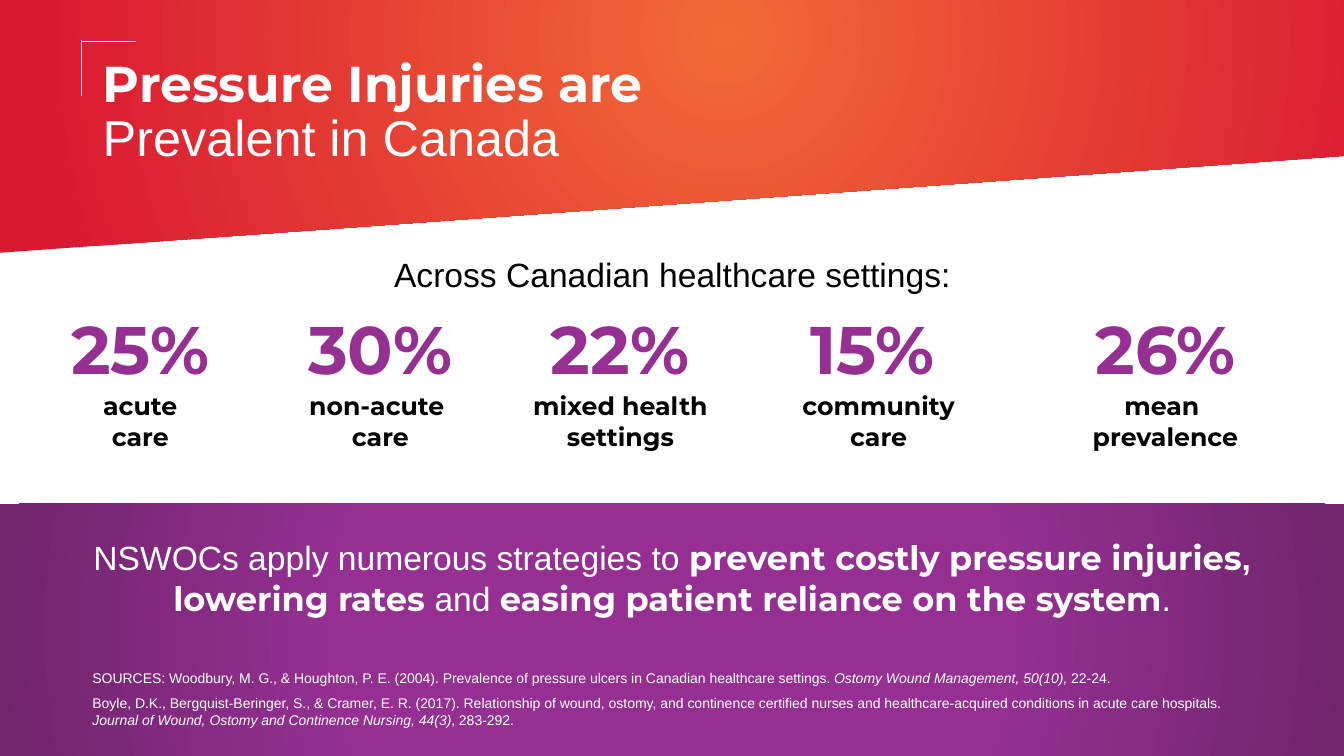
"""Build a slide on the prevalence of pressure injuries in Canadian healthcare."""
from lxml.etree import SubElement
from pptx import Presentation
from pptx.dml.color import RGBColor
from pptx.enum.shapes import MSO_CONNECTOR, MSO_SHAPE
from pptx.enum.text import MSO_ANCHOR, PP_ALIGN
from pptx.oxml.ns import qn
from pptx.util import Cm, Pt

WHITE = RGBColor(0xFF, 0xFF, 0xFF)
BLACK = RGBColor(0, 0, 0)
ORANGE = RGBColor(0xF2, 0x69, 0x36)
RED = RGBColor(0xDA, 0x1A, 0x32)
PURPLE = RGBColor(0x95, 0x30, 0x92)
DARK_PURPLE = RGBColor(0x70, 0x24, 0x6D)
BODY_FONT, BOLD_FONT = "Arial", "Montserrat"


def paint_radial(shape, inner, outer, start, across, down):
    """Fill a shape with a circular gradient centred at the given percentages."""
    shape.shadow.inherit = False
    shape.line.fill.background()
    shape.fill.gradient()
    stops = shape.fill.gradient_stops
    for stop, color, position in zip(stops, (inner, outer), (start, 1)):
        stop.color.rgb = color
        stop.position = position
    gradient = shape._element.spPr.find(qn("a:gradFill"))
    gradient.remove(gradient.find(qn("a:lin")))
    circle = SubElement(gradient, qn("a:path"), path="circle")
    sides = {"l": across, "t": down, "r": 100 - across, "b": 100 - down}
    SubElement(circle, qn("a:fillToRect"),
               {side: str(percent * 1000) for side, percent in sides.items()})


def add_spans(paragraph, spans, size, color):
    """Add (text, font, bold, italic) runs, with line breaks at newlines."""
    for text, font, bold, italic in spans:
        for number, line in enumerate(text.split("\n")):
            if number:
                paragraph.add_line_break()
            if line:
                span = paragraph.add_run()
                span.text = line
                span.font.name = font
                span.font.size = Pt(size)
                span.font.bold = bold
                span.font.italic = italic
                span.font.color.rgb = color


deck = Presentation()
deck.slide_width, deck.slide_height = Cm(33.87), Cm(19.05)
page = deck.slides.add_slide(deck.slide_layouts[6])

outline = page.shapes.build_freeform(0, 0)
outline.add_line_segments([(Cm(33.87), 0), (Cm(33.87), Cm(3.93)), (0, Cm(6.37))])
paint_radial(outline.convert_to_shape(), ORANGE, RED, 0, 54, 14)

footer = page.shapes.add_shape(MSO_SHAPE.RECTANGLE, 0, Cm(12.7), Cm(33.87), Cm(6.35))
paint_radial(footer, PURPLE, DARK_PURPLE, 0.48, 50, 50)

TITLE = [("Pressure Injuries are \n", BOLD_FONT, True, False),
         ("Prevalent in Canada", BODY_FONT, False, False)]
INTRO = [("Across Canadian healthcare settings:", BODY_FONT, False, False)]
STATEMENT = [
    ("NSWOCs apply numerous strategies to ", BODY_FONT, False, False),
    ("prevent costly pressure injuries", BOLD_FONT, True, False),
    (",", BODY_FONT, True, False),
    (" lowering rates ", BOLD_FONT, True, False),
    ("and ", BODY_FONT, False, False),
    ("easing patient reliance on the system", BOLD_FONT, True, False),
    (".", BODY_FONT, False, False),
]
SOURCES = [
    [("SOURCES: Woodbury, M. G., & Houghton, P. E. (2004). Prevalence of pressure "
      "ulcers in Canadian healthcare settings. ", BODY_FONT, False, False),
     ("Ostomy Wound Management, 50(10), ", BODY_FONT, False, True),
     ("22-24.", BODY_FONT, False, False)],
    [("Boyle, D.K., Bergquist-Beringer, S., & Cramer, E. R. (2017). Relationship of "
      "wound, ostomy, and continence certified nurses and healthcare-acquired "
      "conditions in acute care hospitals. ", BODY_FONT, False, False),
     ("Journal of Wound, Ostomy and Continence Nursing, 44(3)", BODY_FONT, False, True),
     (", 283-292.", BODY_FONT, False, False)],
]

TEXTS = [
    ((2.34, 1.02, 29.21, 3.68), [TITLE], 36, WHITE, PP_ALIGN.LEFT,
     MSO_ANCHOR.MIDDLE, 0.9, 0, 0),
    ((2.34, 6.4, 29.21, 1.3), [INTRO], 24, BLACK, PP_ALIGN.CENTER,
     MSO_ANCHOR.TOP, 0.9, 10, 12),
    ((0.53, 13.41, 32.82, 2.31), [STATEMENT], 24, WHITE, PP_ALIGN.CENTER,
     MSO_ANCHOR.TOP, 1.0, 0, 0),
    ((2.08, 16.74, 29.69, 1.75), SOURCES, 10, WHITE, PP_ALIGN.LEFT,
     MSO_ANCHOR.TOP, 1.0, 3, 3),
]
for place, paragraphs, size, color, align, anchor, spacing, before, after in TEXTS:
    frame = page.shapes.add_textbox(*map(Cm, place)).text_frame
    frame.word_wrap = True
    frame.vertical_anchor = anchor
    for number, spans in enumerate(paragraphs):
        paragraph = frame.add_paragraph() if number else frame.paragraphs[0]
        paragraph.alignment = align
        paragraph.line_spacing = spacing
        paragraph.space_before, paragraph.space_after = Pt(before), Pt(after)
        add_spans(paragraph, spans, size, color)

RATES = [
    ("25%", "acute\ncare", 6.05),
    ("30%", "non-acute \ncare", 6.05),
    ("22%", "mixed health settings", 6.05),
    ("15% ", "community \ncare ", 7.14),
    ("26%", "mean \nprevalence", 7.14),
]
table = page.shapes.add_table(1, len(RATES), Cm(0.51), Cm(7.67), Cm(32.43), Cm(3.81)).table
table.first_row = table.horz_banding = False
for column, (rate, setting, width) in enumerate(RATES):
    table.columns[column].width = Cm(width)
    cell = table.cell(0, column)
    cell.fill.background()
    rate_line = cell.text_frame.paragraphs[0]
    setting_line = cell.text_frame.add_paragraph()
    rate_line.alignment = setting_line.alignment = PP_ALIGN.CENTER
    add_spans(rate_line, [(rate, BOLD_FONT, True, False)], 48, PURPLE)
    add_spans(setting_line, [(setting, BOLD_FONT, True, False)], 18, BLACK)

for ends in ((3.43, 1.04, 2.03, 1.04), (2.05, 1.02, 2.05, 2.41)):
    corner = page.shapes.add_connector(MSO_CONNECTOR.STRAIGHT, *map(Cm, ends))
    corner.line.color.rgb = WHITE
    corner.line.width = Pt(1)
    SubElement(corner._element.spPr, qn("a:effectLst"))

deck.save("out.pptx")
